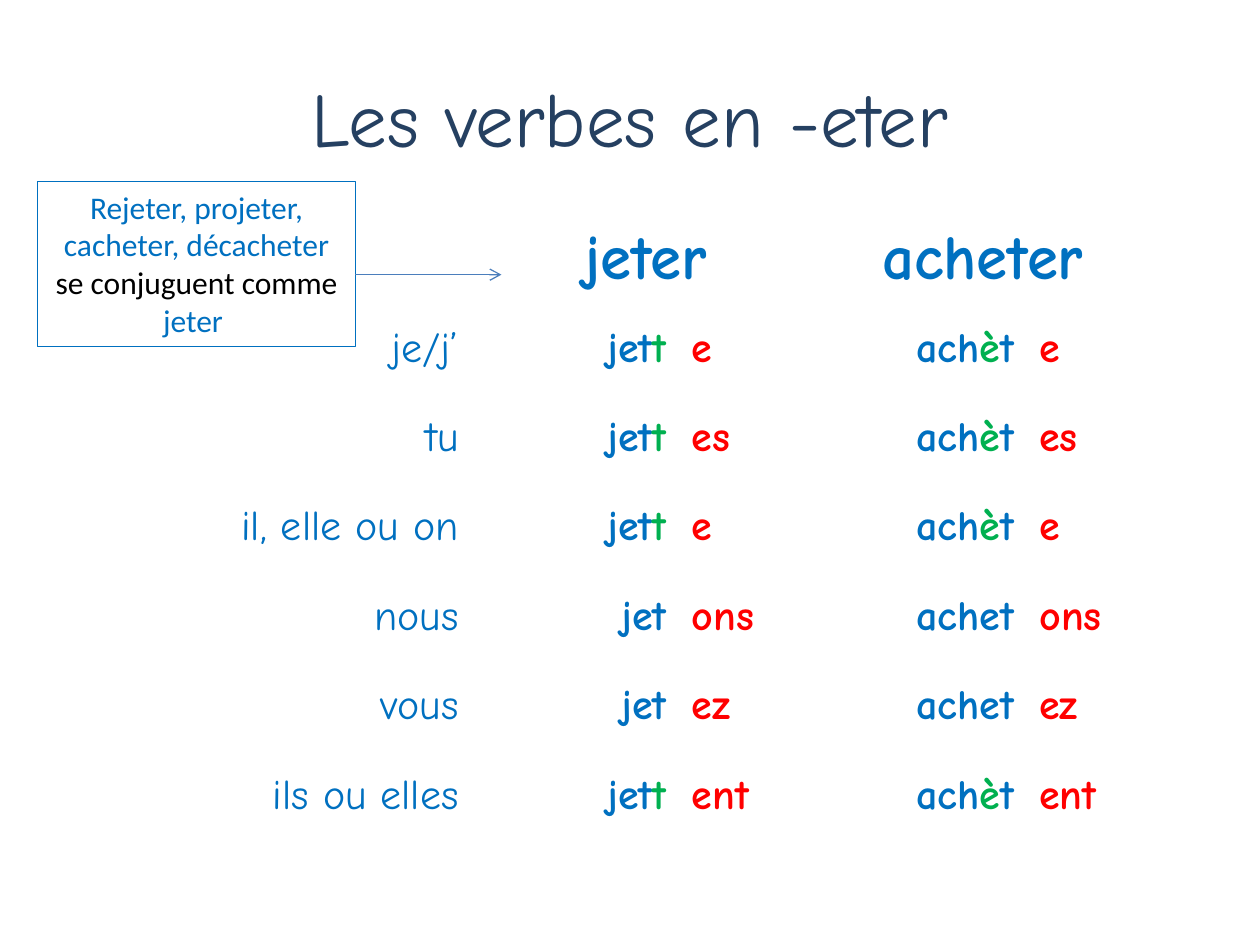
from dataclasses import dataclass

from lxml.etree import SubElement
from pptx import Presentation
from pptx.dml.color import RGBColor
from pptx.enum.shapes import MSO_CONNECTOR, MSO_SHAPE
from pptx.enum.text import MSO_ANCHOR, MSO_AUTO_SIZE, PP_ALIGN
from pptx.oxml.ns import qn
from pptx.util import Inches, Pt


@dataclass(frozen=True)
class Theme:
    navy: str = "254061"
    blue: str = "0070C0"
    green: str = "00B050"
    red: str = "FF0000"
    black: str = "000000"
    white: str = "FFFFFF"
    arrow: str = "4B7EBC"
    hand_font: str = "Comic Neue"
    note_font: str = "Calibri"
    title_size: int = 44
    verb_size: int = 36
    form_size: int = 24
    note_size: int = 18
    line_width: float = 0.75


class SlideBuilder:
    def __init__(self, theme, page):
        self.theme = theme
        self.page = page

    def add_spans(self, para, spans, align, size, font, bold=False):
        """Fill a paragraph with (text, colour) spans."""
        para.alignment = align
        style = {"name": font, "size": Pt(size), "bold": bold}
        for text, colour in spans:
            span = para.add_run()
            span.text = text
            for name, value in style.items():
                setattr(span.font, name, value)
            span.font.color.rgb = RGBColor.from_string(colour)

    def title(self, text, left, top, width, height):
        box = self.page.shapes.title
        place = {"left": left, "top": top, "width": width, "height": height}
        for name, value in place.items():
            setattr(box, name, Inches(value))
        box.text_frame.vertical_anchor = MSO_ANCHOR.MIDDLE
        self.add_spans(box.text_frame.paragraphs[0], [(text, self.theme.navy)],
                       PP_ALIGN.CENTER, self.theme.title_size, self.theme.hand_font)

    def cell(self, cell, spans, align, size, bold=True):
        cell.vertical_anchor = MSO_ANCHOR.MIDDLE
        self.add_spans(cell.text_frame.paragraphs[0], spans, align, size,
                       self.theme.hand_font, bold)

    def table(self, left, top, column_widths, row_height, row_count):
        table = self.page.shapes.add_table(
            row_count, len(column_widths), Inches(left), Inches(top),
            Inches(sum(column_widths)), Inches(row_height * row_count)).table
        table.first_row = table.horz_banding = False
        for column, width in zip(table.columns, column_widths):
            column.width = Inches(width)
        for cell in table.iter_cells():
            cell.fill.solid()
            cell.fill.fore_color.rgb = RGBColor.from_string(self.theme.white)
        return table

    def note(self, paragraphs, left, top, width, height):
        box = self.page.shapes.add_shape(
            MSO_SHAPE.RECTANGLE, Inches(left), Inches(top), Inches(width), Inches(height))
        box.shadow.inherit = False
        box.fill.background()
        box.line.color.rgb = RGBColor.from_string(self.theme.blue)
        box.line.width = Pt(self.theme.line_width)
        frame = box.text_frame
        frame.word_wrap = True
        frame.auto_size = MSO_AUTO_SIZE.SHAPE_TO_FIT_TEXT
        frame.vertical_anchor = MSO_ANCHOR.TOP
        for index, spans in enumerate(paragraphs):
            para = frame.add_paragraph() if index else frame.paragraphs[0]
            self.add_spans(para, spans, PP_ALIGN.CENTER,
                           self.theme.note_size, self.theme.note_font)

    def arrow(self, start, end):
        line = self.page.shapes.add_connector(
            MSO_CONNECTOR.STRAIGHT, *(Inches(value) for value in (*start, *end)))
        line.line.color.rgb = RGBColor.from_string(self.theme.arrow)
        line.line.width = Pt(self.theme.line_width)
        properties = line._element.spPr
        SubElement(properties.find(qn("a:ln")), qn("a:tailEnd"), type="arrow")
        SubElement(properties, qn("a:effectLst"))


def main():
    theme = Theme()
    deck = Presentation()
    deck.slide_width, deck.slide_height = Inches(10), Inches(7.5)
    page = deck.slides.add_slide(deck.slide_layouts[5])
    builder = SlideBuilder(theme, page)

    builder.title("Les verbes en -eter", 0.5, 0.3, 9, 1.25)

    # Conjugation: pronoun, ending, whether the stem changes
    forms = [("je/j’", "e", True), ("tu", "es", True), ("il, elle ou on", "e", True),
             ("nous", "ons", False), ("vous", "ez", False), ("ils ou elles", "ent", True)]
    # Verb, plain stem, changed stem, by the column where the stem stands
    verbs = {
        1: ("jeter", [("jet", theme.blue)],
            [("jet", theme.blue), ("t", theme.green)]),
        3: ("acheter", [("achet", theme.blue)],
            [("ach", theme.blue), ("è", theme.green), ("t", theme.blue)]),
    }
    table = builder.table(1.22, 1.7, [2.52, 1.65, 1.12, 1.64, 0.94], 0.71, len(forms) + 1)

    # Verb headings, each over a stem and an ending column
    for column, (verb, _, _) in verbs.items():
        heading = table.cell(0, column)
        heading.merge(table.cell(0, column + 1))
        builder.cell(heading, [(verb, theme.blue)], PP_ALIGN.CENTER, theme.verb_size)

    # Conjugated forms
    for row, (pronoun, ending, changes) in enumerate(forms, start=1):
        builder.cell(table.cell(row, 0), [(pronoun, theme.blue)],
                     PP_ALIGN.RIGHT, theme.form_size, bold=False)
        for column, (_, plain, changed) in verbs.items():
            builder.cell(table.cell(row, column), changed if changes else plain,
                         PP_ALIGN.RIGHT, theme.form_size)
            builder.cell(table.cell(row, column + 1), [(ending, theme.red)],
                         PP_ALIGN.LEFT, theme.form_size)

    # Note on similar verbs, pointing to the model verb
    builder.note([
        [("Rejeter, projeter, cacheter, décacheter", theme.blue)],
        [("se conjuguent comme ", theme.black), ("jeter ", theme.blue)],
    ], 0.3, 1.44, 2.52, 1.31)
    builder.arrow((2.82, 2.18), (3.98, 2.18))

    deck.save("out.pptx")


if __name__ == "__main__":
    main()
